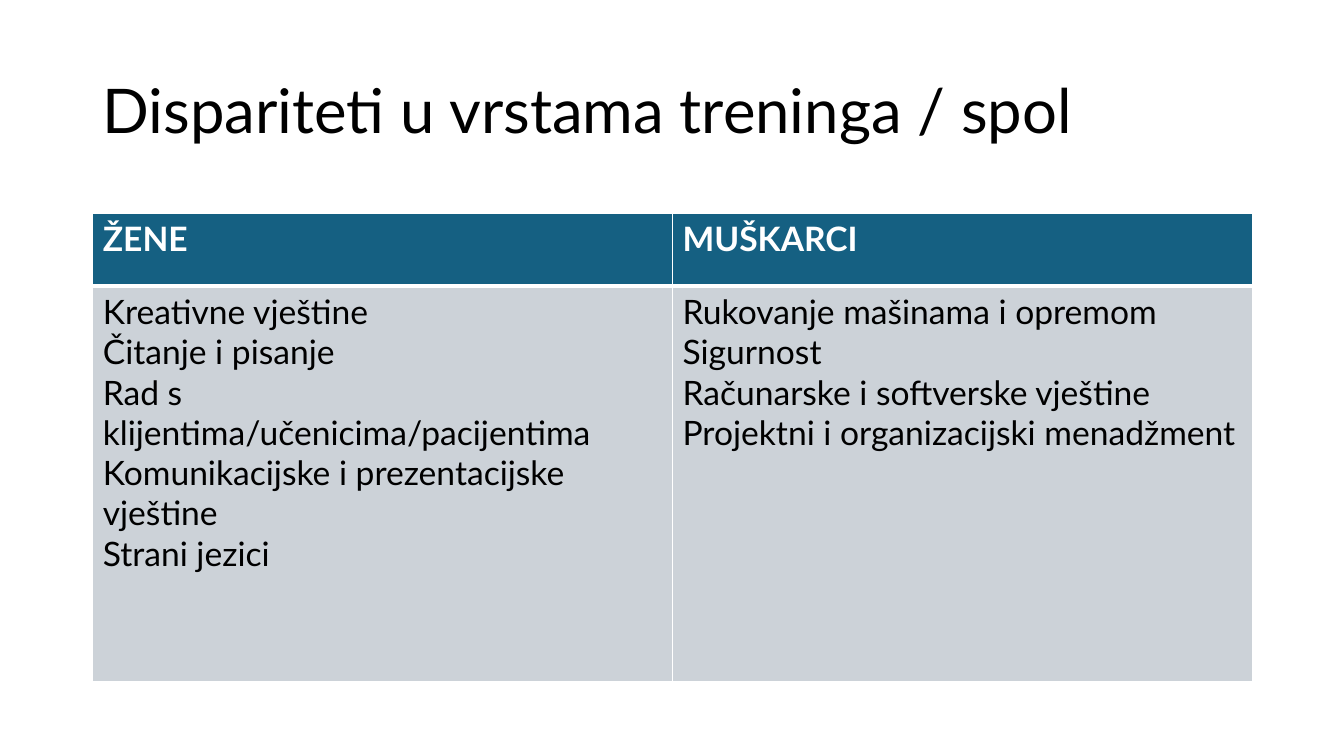
from lxml.etree import SubElement
from pptx import Presentation
from pptx.dml.color import RGBColor
from pptx.enum.text import MSO_ANCHOR
from pptx.oxml.ns import qn
from pptx.util import Inches, Pt

FONT = "Lato"
BLACK = RGBColor(0x00, 0x00, 0x00)
WHITE = RGBColor(0xFF, 0xFF, 0xFF)
HEADER_BLUE = RGBColor(0x15, 0x60, 0x82)
BODY_GREY = RGBColor(0xCC, 0xD2, 0xD8)

TITLE = "Dispariteti u vrstama treninga / spol"
TRAININGS = {
    "ŽENE": [
        "Kreativne vještine",
        "Čitanje i pisanje",
        "Rad s klijentima/učenicima/pacijentima",
        "Komunikacijske i prezentacijske vještine",
        "Strani jezici",
    ],
    "MUŠKARCI": [
        "Rukovanje mašinama i opremom",
        "Sigurnost",
        "Računarske i softverske vještine",
        "Projektni i organizacijski menadžment",
    ],
}
TITLE_FORMAT = {"name": FONT, "size": Pt(44), "bold": False}
HEADER_FORMAT = {"name": FONT, "size": Pt(24), "bold": True}
BODY_FORMAT = {"name": FONT, "size": Pt(24), "bold": False}
HEADER_BORDERS = {"lnL": 1, "lnR": 1, "lnT": 1, "lnB": 3}
BODY_BORDERS = {"lnL": 1, "lnR": 1, "lnT": 3, "lnB": 1}


def write_lines(frame, lines, font_format, color):
    frame.text = "\n".join(lines)
    for paragraph in frame.paragraphs:
        for key, value in font_format.items():
            setattr(paragraph.font, key, value)
        paragraph.font.color.rgb = color


def set_borders(cell, borders):
    properties = cell._tc.get_or_add_tcPr()
    for side, points in borders.items():
        border = SubElement(properties, qn(f"a:{side}"), w=str(Pt(points)))
        fill = SubElement(border, qn("a:solidFill"))
        SubElement(fill, qn("a:srgbClr"), val=str(WHITE))


def add_title(slide, left, top, width, height):
    title = slide.shapes.add_textbox(left, top, width, height).text_frame
    title.word_wrap = True
    title.vertical_anchor = MSO_ANCHOR.MIDDLE
    write_lines(title, [TITLE], TITLE_FORMAT, BLACK)
    title.paragraphs[0].line_spacing = 0.9


def add_training_table(slide, left, top, width, height):
    header_height = Inches(0.72)
    table = slide.shapes.add_table(2, len(TRAININGS), left, top, width, height).table
    table.rows[0].height = header_height
    table.rows[1].height = height - header_height

    # One column for each gender: heading above its kinds of training
    for column, (gender, trainings) in enumerate(TRAININGS.items()):
        parts = [
            ([gender], HEADER_FORMAT, WHITE, HEADER_BLUE, HEADER_BORDERS),
            (trainings, BODY_FORMAT, BLACK, BODY_GREY, BODY_BORDERS),
        ]
        for row, (lines, font_format, color, background, borders) in enumerate(parts):
            cell = table.cell(row, column)
            write_lines(cell.text_frame, lines, font_format, color)
            set_borders(cell, borders)
            cell.fill.solid()
            cell.fill.fore_color.rgb = background


def main():
    presentation = Presentation()
    presentation.slide_width = Inches(13.33)
    presentation.slide_height = Inches(7.5)
    slide = presentation.slides.add_slide(presentation.slide_layouts[6])

    left, width = Inches(0.92), Inches(11.5)
    add_title(slide, left, Inches(0.4), width, Inches(1.45))
    add_training_table(slide, left, Inches(2.12), width, Inches(4.64))
    presentation.save("out.pptx")


if __name__ == "__main__":
    main()
